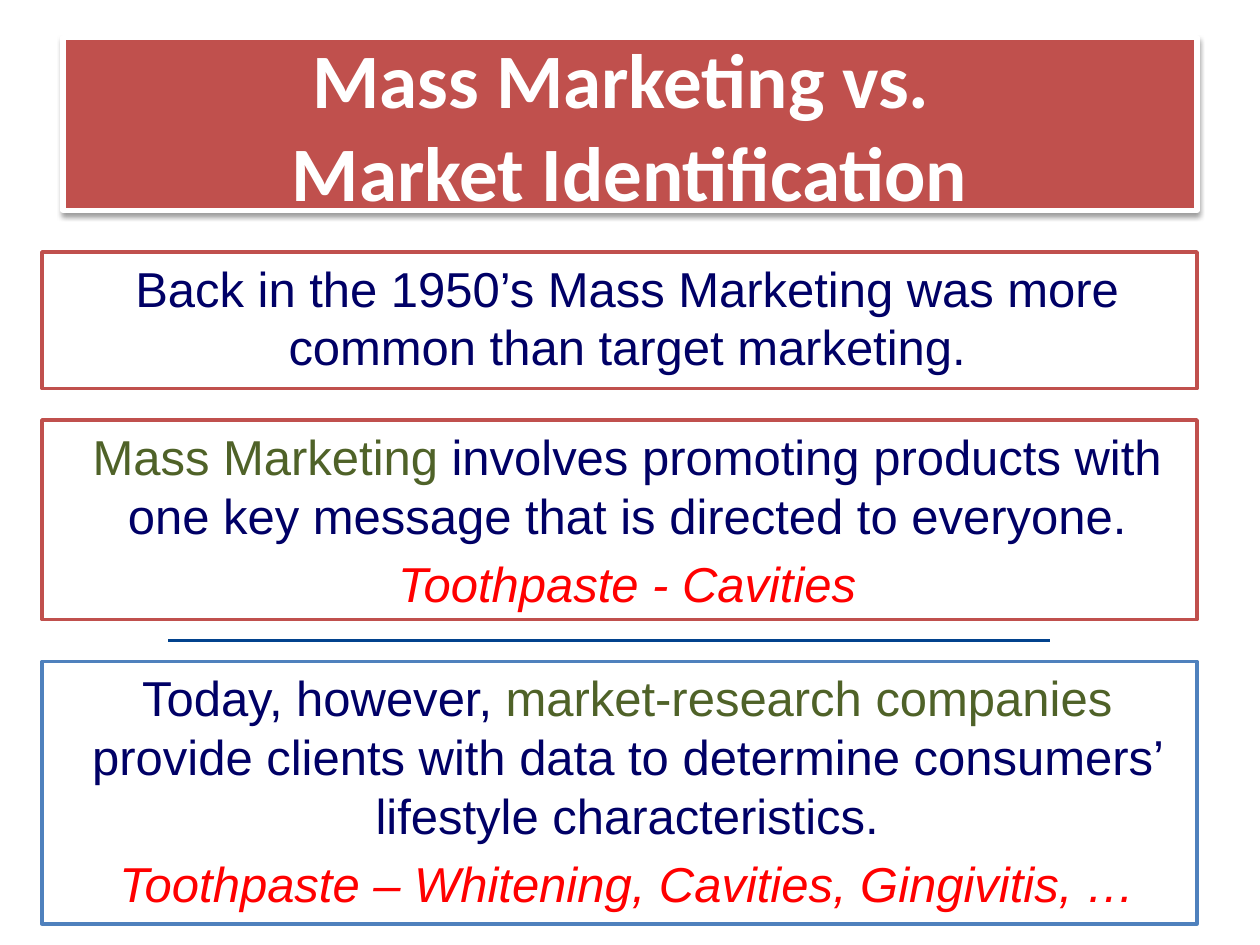
from lxml.etree import SubElement
from pptx import Presentation
from pptx.dml.color import RGBColor
from pptx.enum.shapes import MSO_CONNECTOR, MSO_SHAPE
from pptx.enum.text import MSO_ANCHOR, PP_ALIGN
from pptx.oxml import parse_xml
from pptx.oxml.ns import nsdecls, qn
from pptx.util import Pt

NAVY, GREEN, RED = "000066", "4F6228", "FF0000"
BRICK, BLUE, WHITE = "C0504D", "4F81BD", "FFFFFF"


def paint(shape, fill, line, width):
    shape.fill.solid()
    shape.fill.fore_color.rgb = RGBColor.from_string(fill)
    shape.line.color.rgb = RGBColor.from_string(line)
    shape.line.width = Pt(width)


def add_run(para, text, font, size, color):
    run = para.add_run()
    run.text = text
    run.font.name = font
    run.font.size = Pt(size)
    run.font.color.rgb = RGBColor.from_string(color)
    return run


deck = Presentation()
deck.slide_width, deck.slide_height = Pt(720), Pt(540)
slide = deck.slides.add_slide(deck.slide_layouts[5])

# Title banner
title = slide.shapes.title
title.left, title.top, title.width, title.height = Pt(36), Pt(21.6), Pt(648), Pt(98.6)
paint(title, BRICK, WHITE, 3)
title._element.spPr.append(parse_xml(
    f'<a:effectLst {nsdecls("a")}><a:outerShdw blurRad="{Pt(3.1)}" dist="{Pt(1.6)}" '
    'dir="5400000" rotWithShape="0"><a:srgbClr val="000000"><a:alpha val="38000"/>'
    '</a:srgbClr></a:outerShdw></a:effectLst>'))
frame = title.text_frame
frame.word_wrap = True
frame.vertical_anchor = MSO_ANCHOR.MIDDLE
para = frame.paragraphs[0]
para.alignment = PP_ALIGN.CENTER
add_run(para, "Mass Marketing vs. ", "Calibri", 44, WHITE).font.bold = True
para.add_line_break()
add_run(para, "Market Identification", "Calibri", 44, WHITE).font.bold = True

# Text boxes: top, height, border, paragraphs of (text, colour) runs
boxes = [
    (144, 78, BRICK, [
        [("Back in the 1950’s Mass Marketing was more common than target marketing.", NAVY)],
    ]),
    (240, 114, BRICK, [
        [("Mass Marketing ", GREEN),
         ("involves promoting products with one key message that is directed to everyone.",
          NAVY)],
        [("Toothpaste - Cavities", RED)],
    ]),
    (378, 150, BLUE, [
        [("Today, however, ", NAVY),
         ("market-research companies ", GREEN),
         ("provide clients with data to determine consumers’ lifestyle characteristics.",
          NAVY)],
        [("Toothpaste – Whitening, Cavities, Gingivitis, …", RED)],
    ]),
]
for top, height, border, paras in boxes:
    box = slide.shapes.add_shape(MSO_SHAPE.RECTANGLE, Pt(24), Pt(top), Pt(660), Pt(height))
    box.shadow.inherit = False
    paint(box, WHITE, border, 2)
    frame = box.text_frame
    frame.word_wrap = True
    frame.vertical_anchor = MSO_ANCHOR.TOP
    for i, runs in enumerate(paras):
        para = frame.add_paragraph() if i else frame.paragraphs[0]
        para.alignment = PP_ALIGN.CENTER
        para._p.get_or_add_pPr().set("marL", str(Pt(8.64)))
        if i:
            para.space_before = Pt(5.6)
        for text, color in runs:
            add_run(para, text, "Arial", 28, color).font.italic = color == RED

# Divider between past and present
rule = slide.shapes.add_connector(MSO_CONNECTOR.STRAIGHT, Pt(600), Pt(366), Pt(96), Pt(366))
rule.line.color.rgb = RGBColor.from_string("01428D")
rule.line.width = Pt(2.25)
SubElement(rule._element.spPr, qn("a:effectLst"))

deck.save("out.pptx")
